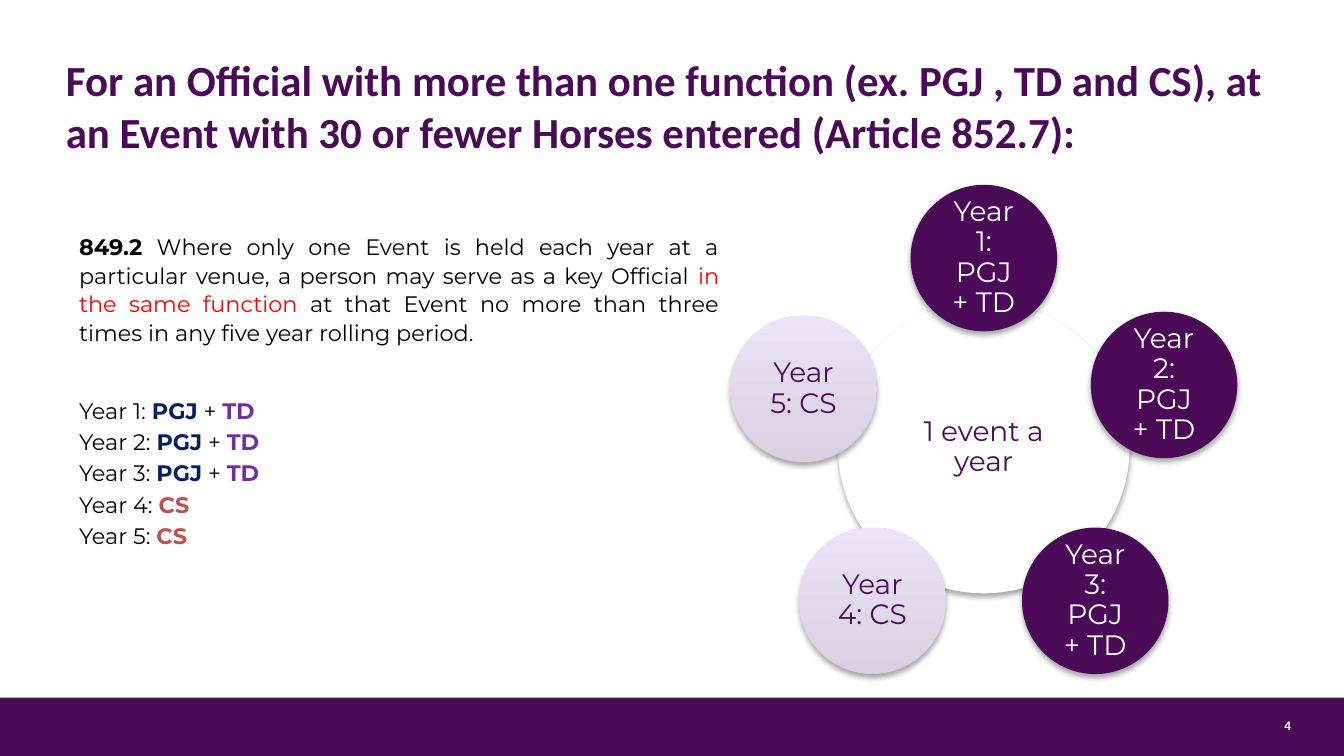
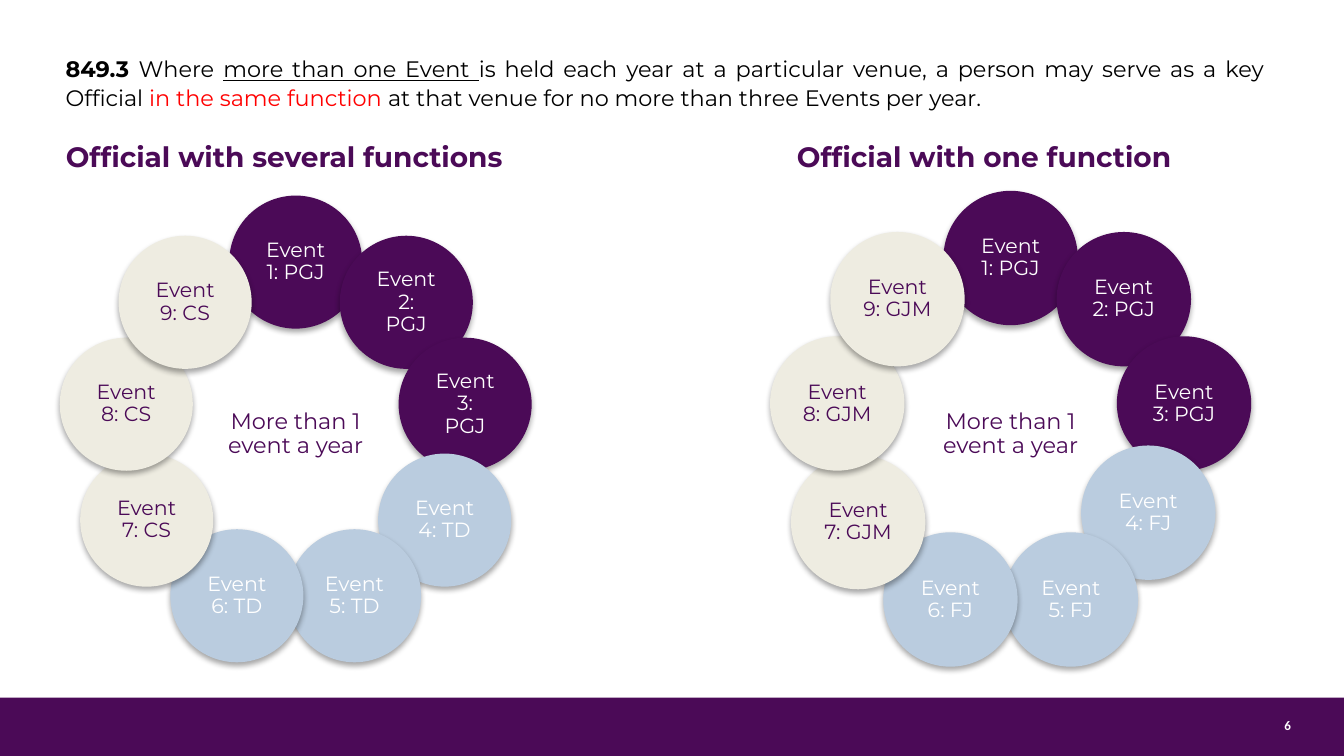
from dataclasses import dataclass
from math import cos, pi, sin
from typing import Optional

from lxml import etree
from pptx import Presentation
from pptx.dml.color import RGBColor
from pptx.enum.shapes import MSO_SHAPE
from pptx.enum.text import MSO_ANCHOR, PP_ALIGN
from pptx.oxml.ns import qn
from pptx.presentation import Presentation as Deck
from pptx.shapes.autoshape import Shape
from pptx.slide import Slide
from pptx.table import _Cell
from pptx.text.text import TextFrame, _Paragraph
from pptx.util import Inches, Pt

PURPLE = RGBColor(0x4B, 0x0A, 0x57)
WHITE = RGBColor(0xFF, 0xFF, 0xFF)
BLACK = RGBColor(0x00, 0x00, 0x00)
RED = RGBColor(0xFF, 0x00, 0x00)
NAVY = RGBColor(0x00, 0x20, 0x60)
VIOLET = RGBColor(0x70, 0x30, 0xA0)
BRICK = RGBColor(0xC0, 0x50, 0x4D)
LAVENDER_DARK = RGBColor(0xD7, 0xD1, 0xE2)
LAVENDER_LIGHT = RGBColor(0xEB, 0xE3, 0xF7)
PALE_BLUE = RGBColor(0xBA, 0xCC, 0xDF)
CREAM = RGBColor(0xEE, 0xEC, 0xE1)

HEADING_FONT = "Calibri"
BODY_FONT = "Montserrat"

CENTER = PP_ALIGN.CENTER
JUSTIFY = PP_ALIGN.JUSTIFY
MIDDLE = MSO_ANCHOR.MIDDLE
OVAL = MSO_SHAPE.OVAL
RECTANGLE = MSO_SHAPE.RECTANGLE

SLIDE_WIDTH = Inches(10)
SLIDE_HEIGHT = SLIDE_WIDTH * 9 // 16
BAND_TOP = Inches(5.19)


@dataclass(frozen=True)
class Span:
    text: str
    color: RGBColor = BLACK
    bold: bool = False
    underline: bool = False


@dataclass(frozen=True)
class Look:
    fill: RGBColor
    text: RGBColor
    inset: float = 0.12
    fade_to: Optional[RGBColor] = None


@dataclass(frozen=True)
class Node:
    label: str
    look: Look
    dx: float = 0
    dy: float = 0


@dataclass(frozen=True)
class Ring:
    x: float
    y: float
    radius: float
    hub_diameter: float
    node_diameter: float
    hub_label: str
    hub_size: float
    node_size: float
    nodes: list[Node]


HUB = Look(WHITE, PURPLE)
MAIN = Look(PURPLE, WHITE)
FADED = Look(LAVENDER_DARK, PURPLE, 0.06, LAVENDER_LIGHT)
SECOND = Look(PALE_BLUE, WHITE)
THIRD = Look(CREAM, PURPLE, 0.06)


def add_spans(paragraph: _Paragraph, spans: list[Span], size: float,
              font: str = BODY_FONT) -> None:
    for span in spans:
        run = paragraph.add_run()
        run.text = span.text
        run.font.name = font
        run.font.size = Pt(size)
        run.font.bold = span.bold
        run.font.underline = span.underline
        run.font.color.rgb = span.color


def justify(paragraph: _Paragraph) -> None:
    paragraph.alignment = JUSTIFY
    paragraph.line_spacing = 1.07
    paragraph.space_after = Pt(8)


def add_text(slide: Slide, left: float, top: float, width: float, height: float,
             side_inset: float = 0.1) -> TextFrame:
    box = slide.shapes.add_textbox(Inches(left), Inches(top), Inches(width), Inches(height))
    frame = box.text_frame
    frame.word_wrap = True
    frame.margin_left = frame.margin_right = Inches(side_inset)
    return frame


def add_slide(deck: Deck, number: str) -> Slide:
    slide = deck.slides.add_slide(deck.slide_layouts[6])
    band = slide.shapes.add_shape(RECTANGLE, 0, BAND_TOP, SLIDE_WIDTH, SLIDE_HEIGHT - BAND_TOP)
    band.shadow.inherit = False
    band.fill.solid()
    band.fill.fore_color.rgb = PURPLE
    band.line.fill.background()
    paragraph = add_text(slide, 9.49, 5.29, 0.18, 0.23, 0).paragraphs[0]
    paragraph.alignment = CENTER
    add_spans(paragraph, [Span(number, WHITE, bold=True)], 7, HEADING_FONT)
    return slide


def add_soft_shadow(shape: Shape) -> None:
    shape.shadow.inherit = False
    effects = shape._element.spPr.find(qn("a:effectLst"))
    shadow = etree.SubElement(effects, qn("a:outerShdw"), blurRad="40000", dist="23000",
                              dir="5400000", rotWithShape="0")
    color = etree.SubElement(shadow, qn("a:srgbClr"), val=str(BLACK))
    etree.SubElement(color, qn("a:alpha"), val="35000")


def add_circle(slide: Slide, x: float, y: float, diameter: float, label: str,
               size: float, look: Look) -> None:
    circle = slide.shapes.add_shape(OVAL, Inches(x - diameter / 2), Inches(y - diameter / 2),
                                    Inches(diameter), Inches(diameter))
    if look.fade_to is None:
        circle.fill.solid()
        circle.fill.fore_color.rgb = look.fill
    else:
        circle.fill.gradient()
        circle.fill.gradient_angle = 90
        for stop, color in zip(circle.fill.gradient_stops, (look.fill, look.fade_to)):
            stop.color.rgb = color
    circle.line.fill.background()
    add_soft_shadow(circle)
    frame = circle.text_frame
    frame.word_wrap = True
    frame.vertical_anchor = MIDDLE
    frame.margin_left = frame.margin_right = Inches(look.inset)
    frame.margin_top = frame.margin_bottom = Inches(look.inset)
    paragraph = frame.paragraphs[0]
    paragraph.alignment = CENTER
    paragraph.line_spacing = 0.9
    for index, line in enumerate(label.split("\n")):
        if index:
            paragraph.add_line_break()
        add_spans(paragraph, [Span(line, look.text)], size)


def add_ring(slide: Slide, ring: Ring) -> None:
    add_circle(slide, ring.x, ring.y, ring.hub_diameter, ring.hub_label, ring.hub_size, HUB)
    for index, node in enumerate(ring.nodes):
        angle = 2 * pi * index / len(ring.nodes)
        add_circle(slide, ring.x + ring.radius * sin(angle) + node.dx,
                   ring.y - ring.radius * cos(angle) + node.dy,
                   ring.node_diameter, node.label, ring.node_size, node.look)


def add_cell_borders(cell: _Cell) -> None:
    properties = cell._tc.get_or_add_tcPr()
    for position, (side, points) in enumerate((("L", 1), ("R", 1), ("T", 1), ("B", 3))):
        border = etree.Element(qn(f"a:ln{side}"), w=str(Pt(points)))
        fill = etree.SubElement(border, qn("a:solidFill"))
        etree.SubElement(fill, qn("a:srgbClr"), val=str(WHITE))
        properties.insert(position, border)


def add_ring_headings(slide: Slide, headings: list[tuple[str, float]]) -> None:
    table = slide.shapes.add_table(1, len(headings), Inches(0.39), Inches(0.98),
                                   Inches(9.12), Inches(0.39)).table
    for cell, (heading, inset) in zip(table.rows[0].cells, headings):
        cell.fill.solid()
        cell.fill.fore_color.rgb = WHITE
        cell.margin_left = Inches(inset)
        add_cell_borders(cell)
        paragraph = cell.text_frame.paragraphs[0]
        justify(paragraph)
        add_spans(paragraph, [Span(heading, PURPLE, bold=True)], 15)


def build_yearly_slide(deck: Deck) -> None:
    slide = add_slide(deck, "4")
    rule = add_text(slide, 0.49, 1.67, 4.96, 3.28)
    justify(rule.paragraphs[0])
    add_spans(rule.paragraphs[0], [
        Span("849.2", bold=True),
        Span(" Where only one Event is held each year at a particular venue, "
             "a person may serve as a key Official "),
        Span("in the same function", RED),
        Span(" at that Event no more than three times in any five year rolling period. "),
    ], 12)
    judge_and_delegate = [Span("PGJ", NAVY, bold=True), Span(" + "),
                          Span("TD", VIOLET, bold=True)]
    steward = [Span("CS", BRICK, bold=True)]
    for year, functions in enumerate([judge_and_delegate] * 3 + [steward] * 2, start=1):
        paragraph = rule.add_paragraph()
        paragraph.alignment = JUSTIFY
        paragraph.space_before = Pt(19.2 if year == 1 else 2.4)
        add_spans(paragraph, [Span(f"Year {year}: "), *functions], 12)

    title = add_text(slide, 0.49, 0.35, 9.07, 1.05, 0)
    add_spans(title.paragraphs[0], [
        Span("For an Official with more than one function (ex. PGJ , TD and CS), "
             "at an Event with 30 or fewer Horses entered (Article 852.7):",
             PURPLE, bold=True),
    ], 23, HEADING_FONT)

    add_ring(slide, Ring(7.32, 3.33, 1.41, 2.17, 1.09, "1 event a year", 15, 15, [
        Node("Year 1: PGJ + TD", MAIN),
        Node("Year 2: PGJ + TD", MAIN, dy=-0.03),
        Node("Year 3: PGJ + TD", MAIN),
        Node("Year 4: CS", FADED),
        Node("Year 5: CS", FADED),
    ]))


def event_nodes(second: str, third: str, moved: tuple[float, float] = (0, 0)) -> list[Node]:
    groups = [("PGJ", MAIN)] * 3 + [(second, SECOND)] * 3 + [(third, THIRD)] * 3
    nodes = []
    for event, (function, look) in enumerate(groups, start=1):
        gap = "\n" if event == 2 else " "
        dx, dy = moved if event == 4 else (0, 0)
        nodes.append(Node(f"Event{gap}{event}: {function}", look, dx, dy))
    return nodes


def build_events_slide(deck: Deck) -> None:
    slide = add_slide(deck, "6")
    rule = add_text(slide, 0.39, 0.35, 9.12, 0.61)
    justify(rule.paragraphs[0])
    add_spans(rule.paragraphs[0], [
        Span("849.3 ", bold=True),
        Span("Where "),
        Span("more than one Event ", underline=True),
        Span("is held each year at a particular venue, a person may serve as a key Official "),
        Span("in the same function", RED),
        Span(" at that venue for no more than three Events per year."),
    ], 12)
    add_ring_headings(slide, [("Official with several functions ", 0.1),
                              ("Official with one function", 0.98)])
    hub_label = "More than 1 event a year"
    add_ring(slide, Ring(7.52, 3.23, 1.31, 2.01, 1, hub_label, 12, 11,
                         event_nodes("FJ", "GJM", (-0.11, -0.07))))
    add_ring(slide, Ring(2.2, 3.23, 1.28, 1.97, 0.99, hub_label, 12, 11,
                         event_nodes("TD", "CS")))


def main() -> None:
    deck = Presentation()
    deck.slide_width = SLIDE_WIDTH
    deck.slide_height = SLIDE_HEIGHT
    build_yearly_slide(deck)
    build_events_slide(deck)
    deck.save("out.pptx")


if __name__ == "__main__":
    main()
